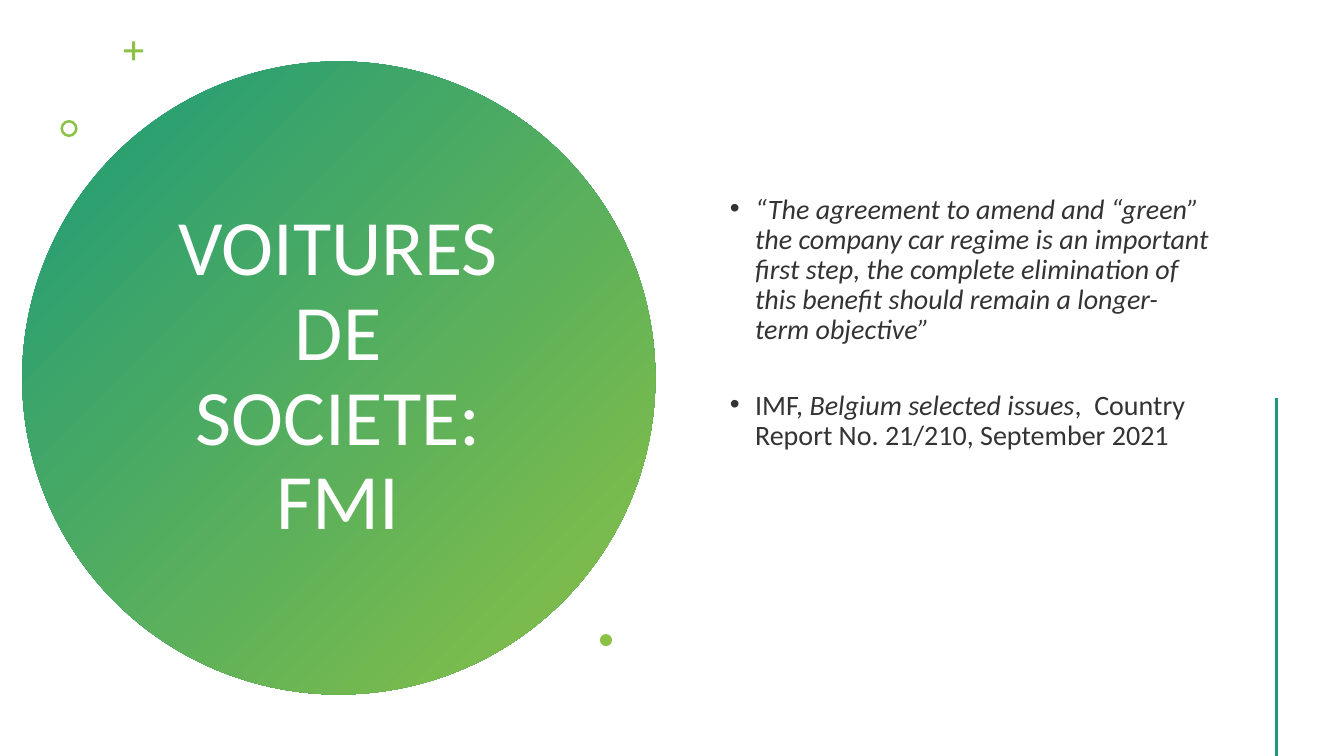
from pptx import Presentation
from pptx.dml.color import RGBColor
from pptx.enum.shapes import MSO_CONNECTOR, MSO_SHAPE
from pptx.enum.text import MSO_ANCHOR, MSO_AUTO_SIZE, PP_ALIGN
from pptx.oxml.ns import qn
from pptx.util import Inches, Pt
from lxml import etree

OVAL, DONUT, CROSS = MSO_SHAPE.OVAL, MSO_SHAPE.DONUT, MSO_SHAPE.CROSS
MIDDLE, CENTER = MSO_ANCHOR.MIDDLE, PP_ALIGN.CENTER

# Content
TITLE = "VOITURES DE SOCIETE: FMI"
# Each bullet: space before in points, then runs of (text, italic)
BULLETS = [
    (5, [("“The agreement to amend and “green” the company car regime is an "
          "important first step, the complete elimination of this benefit "
          "should remain a longer-term objective”", True)]),
    (32, [("IMF, ", False), ("Belgium selected issues", True),
          (",  Country Report No. 21/210, September 2021", False)]),
]


class Theme:
    teal = RGBColor(0x1D, 0x9A, 0x78)
    green = RGBColor(0x8B, 0xC1, 0x45)
    white = RGBColor(0xFF, 0xFF, 0xFF)
    ink = RGBColor(0x33, 0x33, 0x33)
    font = "Calibri"
    title_size, body_size = Pt(56), Pt(20)
    line_spacing = 0.9


# Layout in inches: left, top, width, height
WIDTH, HEIGHT = 13.33, 7.5
DISC = (0.22, 0.61, 6.28, 6.28)
TITLE_BOX = (1.36, 1.41, 3.99, 4.67)
BODY_BOX = (6.89, 0.57, 5.22, 6.38)
BODY_BOTTOM_INSET = 1.16
RULE_X, RULE_TOP = WIDTH * 0.95, 3.95
# Ornaments: shape, left, top, size, stroke as a share of the size
ORNAMENTS = [
    (CROSS, 1.23, 0.41, 0.19, 0.42),
    (DONUT, 0.6, 1.19, 0.17, 0.15),
    (OVAL, 5.95, 6.29, 0.12, None),
]


def inches(box):
    return [Inches(v) for v in box]


def add_plain(s, kind, box):
    sp = s.shapes.add_shape(kind, *inches(box))
    sp.shadow.inherit = False
    sp.line.fill.background()
    return sp


def add_run(p, text, size, color, italic=False):
    r = p.add_run()
    r.text = text
    r.font.name, r.font.size, r.font.italic = Theme.font, size, italic
    r.font.color.rgb = color


def set_frame(tf):
    tf.word_wrap = True
    tf.auto_size = MSO_AUTO_SIZE.NONE
    tf.vertical_anchor = MIDDLE


def set_bullet(p):
    pPr = p._p.get_or_add_pPr()
    pPr.set("marL", str(Inches(0.5)))
    pPr.set("indent", str(-Inches(0.25)))
    etree.SubElement(pPr, qn("a:buFont")).set("typeface", "Arial")
    etree.SubElement(pPr, qn("a:buChar")).set("char", "•")


def main():
    prs = Presentation()
    prs.slide_width, prs.slide_height = Inches(WIDTH), Inches(HEIGHT)
    s = prs.slides.add_slide(prs.slide_layouts[5])

    # Gradient disc
    disc = add_plain(s, OVAL, DISC)
    disc.fill.gradient()
    disc.fill.gradient_angle = 315
    for stop, color in zip(disc.fill.gradient_stops, (Theme.teal, Theme.green)):
        stop.color.rgb = color

    # Title, raised above the disc
    title = s.shapes.title
    title.left, title.top, title.width, title.height = inches(TITLE_BOX)
    disc._element.addnext(title._element)
    set_frame(title.text_frame)
    p = title.text_frame.paragraphs[0]
    p.alignment, p.line_spacing, p.space_after = CENTER, Theme.line_spacing, Pt(6)
    add_run(p, TITLE, Theme.title_size, Theme.white)

    # Ornaments around the disc
    for kind, left, top, size, stroke in ORNAMENTS:
        sp = add_plain(s, kind, (left, top, size, size))
        sp.fill.solid()
        sp.fill.fore_color.rgb = Theme.green
        if stroke:
            sp.adjustments[0] = stroke

    # Quotation and its reference
    tf = s.shapes.add_textbox(*inches(BODY_BOX)).text_frame
    set_frame(tf)
    tf.margin_bottom = Inches(BODY_BOTTOM_INSET)
    for i, (gap, runs) in enumerate(BULLETS):
        p = tf.add_paragraph() if i else tf.paragraphs[0]
        p.line_spacing, p.space_before = Theme.line_spacing, Pt(gap)
        set_bullet(p)
        for text, italic in runs:
            add_run(p, text, Theme.body_size, Theme.ink, italic)

    # Vertical rule down to the slide's foot
    rule = s.shapes.add_connector(MSO_CONNECTOR.STRAIGHT, *inches(
        (RULE_X, RULE_TOP, RULE_X, HEIGHT)))
    rule.line.color.rgb, rule.line.width = Theme.teal, Pt(2)
    etree.SubElement(rule._element.spPr, qn("a:effectLst"))

    prs.save("out.pptx")


if __name__ == "__main__":
    main()
